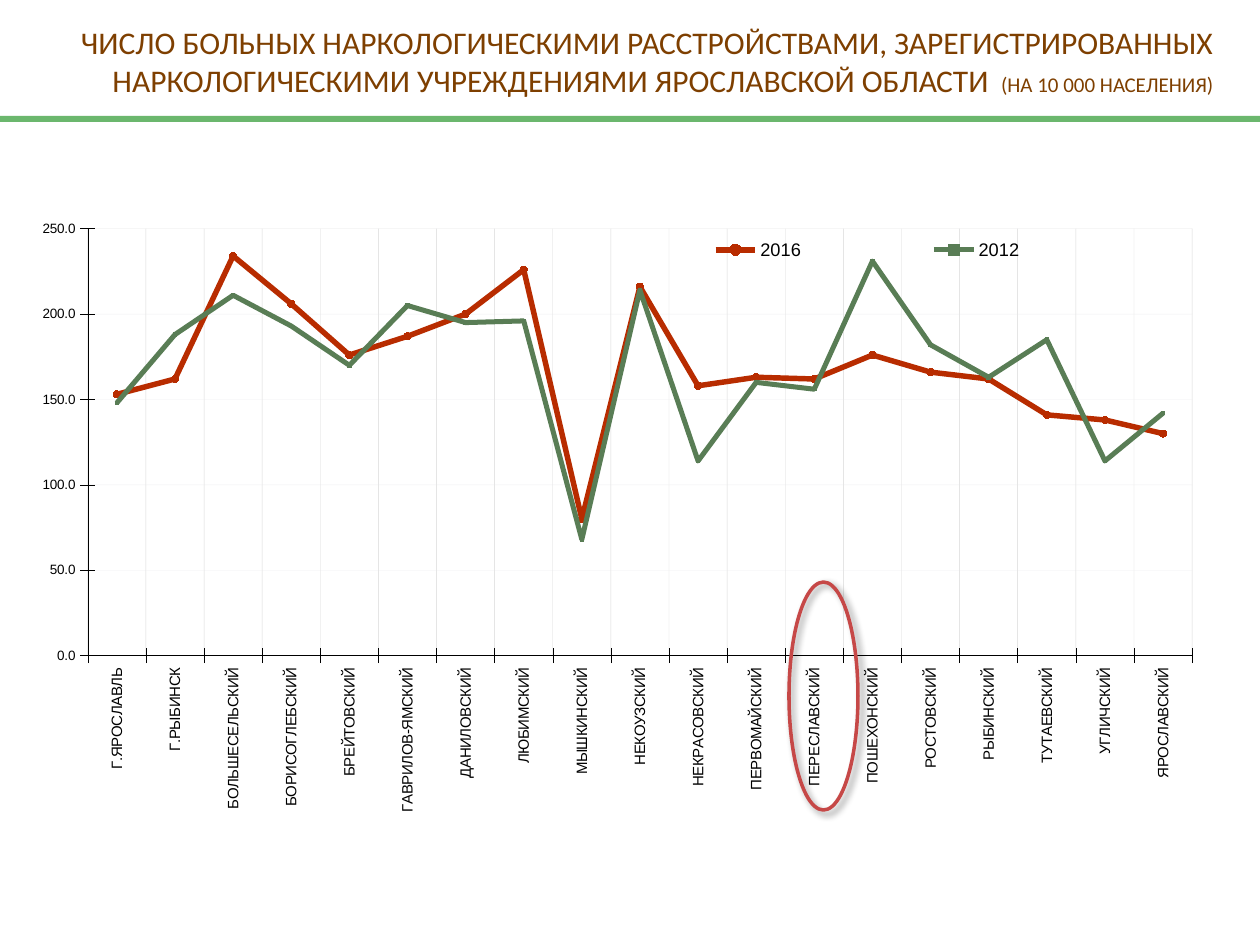
from lxml import etree
from pptx import Presentation
from pptx.chart.data import CategoryChartData
from pptx.dml.color import RGBColor
from pptx.enum.chart import XL_CHART_TYPE, XL_LEGEND_POSITION, XL_MARKER_STYLE, XL_TICK_MARK
from pptx.enum.shapes import MSO_SHAPE
from pptx.enum.text import MSO_ANCHOR, PP_ALIGN
from pptx.oxml import parse_xml
from pptx.oxml.ns import nsdecls, qn
from pptx.util import Emu, Pt

DISTRICTS = [
    "Г.ЯРОСЛАВЛЬ", "Г.РЫБИНСК", "БОЛЬШЕСЕЛЬСКИЙ", "БОРИСОГЛЕБСКИЙ", "БРЕЙТОВСКИЙ",
    "ГАВРИЛОВ-ЯМСКИЙ", "ДАНИЛОВСКИЙ", "ЛЮБИМСКИЙ", "МЫШКИНСКИЙ", "НЕКОУЗСКИЙ",
    "НЕКРАСОВСКИЙ", "ПЕРВОМАЙСКИЙ", "ПЕРЕСЛАВСКИЙ", "ПОШЕХОНСКИЙ", "РОСТОВСКИЙ",
    "РЫБИНСКИЙ", "ТУТАЕВСКИЙ", "УГЛИЧСКИЙ", "ЯРОСЛАВСКИЙ",
]
RATES = {
    "2016": [153, 162, 234, 206, 176, 187, 200, 226, 80, 216,
             158, 163, 162, 176, 166, 162, 141, 138, 130],
    "2012": [148, 188, 211, 193, 170, 205, 195, 196, 68, 214,
             114, 160, 156, 231, 182, 163, 185, 114, 142],
}
# line colour, line width, marker style, marker size, marker colour
STYLES = [
    ("B82C00", 3.11, XL_MARKER_STYLE.CIRCLE, 4, "B95807"),
    ("597D55", 2.87, XL_MARKER_STYLE.SQUARE, 2, "597D55"),
]


def px(n):
    return Emu(round(n * 914400 / 126))


def rgb(value):
    return RGBColor.from_string(value)


def set_font(font, size, color, name):
    font.size, font.name, font.bold = Pt(size), name, False
    font.color.rgb = rgb(color)


def set_line(line, color, width):
    line.color.rgb = rgb(color)
    line.width = Pt(width)


def set_layout(parent, index, x, y, w, h, inner=False):
    """Fix a chart part at fractions of the chart area."""
    for old in parent.findall(qn("c:layout")):
        parent.remove(old)
    target = '<c:layoutTarget val="inner"/>' if inner else ""
    parent.insert(index, parse_xml(
        f'<c:layout {nsdecls("c")}><c:manualLayout>{target}'
        '<c:xMode val="edge"/><c:yMode val="edge"/>'
        f'<c:x val="{x}"/><c:y val="{y}"/><c:w val="{w}"/><c:h val="{h}"/>'
        '</c:manualLayout></c:layout>'))


def style_axis(axis, size, grid_color):
    axis.major_tick_mark = XL_TICK_MARK.CROSS
    axis.minor_tick_mark = XL_TICK_MARK.NONE
    set_font(axis.tick_labels.font, size, "000000", "Arial")
    set_line(axis.format.line, "000000", 0.25)
    axis.has_major_gridlines = True
    set_line(axis.major_gridlines.format.line, grid_color, 0.25)


def refine_chart_xml(root):
    """Fade the grid, turn district names, start lines on the axis, place the parts."""
    for color in root.xpath(".//c:majorGridlines//a:srgbClr"):
        etree.SubElement(color, qn("a:alpha")).set("val", "51000")
    for body in root.xpath(".//c:catAx/c:txPr/a:bodyPr"):
        body.set("rot", "-5400000")
        body.set("vert", "horz")
    for cross in root.xpath(".//c:valAx/c:crossBetween"):
        cross.set("val", "midCat")
    set_layout(root.xpath("c:chart/c:plotArea")[0], 0, 0.056, 0.033, 0.912, 0.648, True)
    set_layout(root.xpath("c:chart/c:legend")[0], 1, 0.47, 0.04, 0.46, 0.05)


def add_title(s, x, y, w, h):
    tf = s.shapes.add_textbox(px(x), px(y), px(w), px(h)).text_frame
    tf.word_wrap = True
    tf.vertical_anchor = MSO_ANCHOR.MIDDLE
    p = tf.paragraphs[0]
    p.alignment = PP_ALIGN.RIGHT
    for text, size in [
        ("ЧИСЛО БОЛЬНЫХ НАРКОЛОГИЧЕСКИМИ РАССТРОЙСТВАМИ, ЗАРЕГИСТРИРОВАННЫХ "
         "НАРКОЛОГИЧЕСКИМИ УЧРЕЖДЕНИЯМИ ЯРОСЛАВСКОЙ ОБЛАСТИ ", 18),
        (" (НА 10 000 НАСЕЛЕНИЯ)", 12),
    ]:
        r = p.add_run()
        r.text = text
        set_font(r.font, size, "7E3F00", "Calibri")


def add_rule(s, x, y, w, h):
    sp = s.shapes.add_shape(MSO_SHAPE.RECTANGLE, px(x), px(y), px(w), px(h))
    sp.shadow.inherit = False
    sp.fill.solid()
    sp.fill.fore_color.rgb = rgb("6BB76D")
    sp.line.fill.background()


def add_rates_chart(s, x, y, w, h):
    data = CategoryChartData(number_format="0.0")
    data.categories = DISTRICTS
    for year, values in RATES.items():
        data.add_series(year, values)
    chart = s.shapes.add_chart(
        XL_CHART_TYPE.LINE_MARKERS, px(x), px(y), px(w), px(h), data).chart
    chart.has_title = False
    set_font(chart.font, 13.7, "000000", "Lato")
    chart.plots[0].vary_by_categories = False

    for series, (color, width, marker, size, marker_color) in zip(chart.plots[0].series, STYLES):
        series.smooth = False
        set_line(series.format.line, color, width)
        series.marker.style, series.marker.size = marker, size
        series.marker.format.fill.solid()
        series.marker.format.fill.fore_color.rgb = rgb(marker_color)
        set_line(series.marker.format.line, marker_color, 0.75)

    style_axis(chart.category_axis, 8.6, "B3B3B3")
    axis = chart.value_axis
    style_axis(axis, 7.7, "E5E5E6")
    axis.minimum_scale, axis.maximum_scale, axis.major_unit = 0, 250, 50
    axis.tick_labels.number_format = "0.0"
    axis.tick_labels.number_format_is_linked = False

    chart.has_legend = True
    chart.legend.position = XL_LEGEND_POSITION.RIGHT
    chart.legend.include_in_layout = False
    set_font(chart.legend.font, 10.4, "000000", "Arial")
    refine_chart_xml(chart.element)


def add_highlight(s, x, y, w, h):
    """Ring one district; the ellipse is laid flat and turned upright."""
    sp = s.shapes.add_shape(
        MSO_SHAPE.OVAL, px(x + (w - h) / 2), px(y + (h - w) / 2), px(h), px(w))
    sp.rotation = 270
    sp.fill.background()
    set_line(sp.line, "C64847", 2)
    sp.shadow.inherit = False
    effects = sp.element.spPr.find(qn("a:effectLst"))
    effects.append(parse_xml(
        f'<a:outerShdw {nsdecls("a")} blurRad="{Pt(4)}" dist="{Pt(3)}" dir="2700000" '
        'rotWithShape="0"><a:srgbClr val="000000"><a:alpha val="40000"/>'
        '</a:srgbClr></a:outerShdw>'))


def main():
    prs = Presentation()
    prs.slide_width, prs.slide_height = px(1260), px(945)
    s = prs.slides.add_slide(prs.slide_layouts[6])
    add_title(s, 35, 16, 1191, 90)
    add_rates_chart(s, 20, 207, 1211, 659)
    add_rule(s, 0, 116, 1260, 6)
    add_highlight(s, 789, 582, 69, 228)
    prs.save("out.pptx")


if __name__ == "__main__":
    main()
